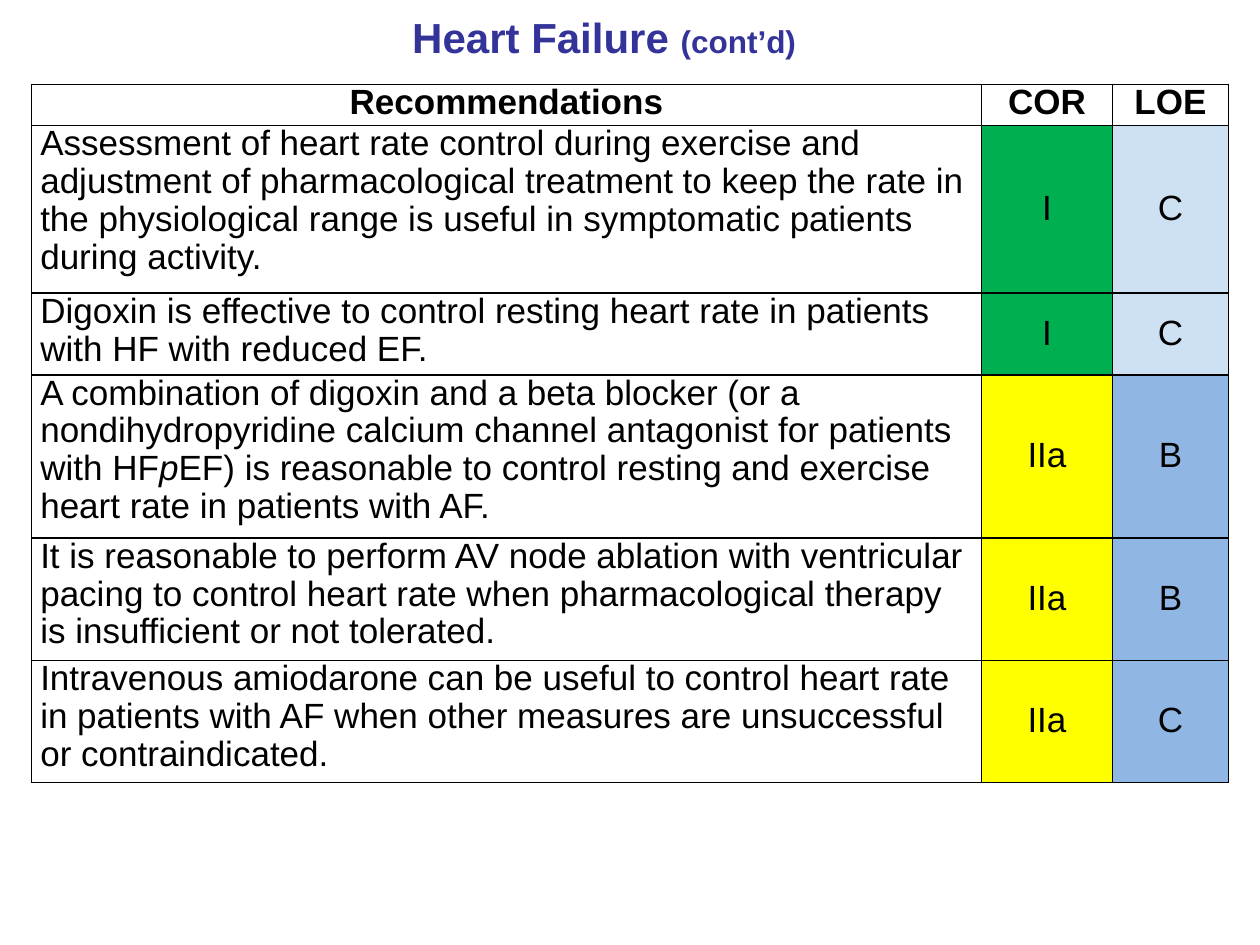
from dataclasses import dataclass

from lxml import etree
from pptx import Presentation, util as u
from pptx.dml.color import RGBColor
from pptx.enum import text
from pptx.oxml.ns import qn


@dataclass(frozen=True)
class Theme:
    font: str = "Arial"
    ink: str = "000000"
    paper: str = "FFFFFF"
    heading: str = "333399"
    title_size: int = 24
    suffix_size: int = 18
    body_size: int = 20
    line_spacing: float = 0.97
    border: float = 1


@dataclass(frozen=True)
class Span:
    words: str
    italic: bool = False


@dataclass(frozen=True)
class Recommendation:
    spans: tuple[Span, ...]
    cor: str
    loe: str
    loe_fill: str
    lines: float


THEME = Theme()
WIDTH, HEIGHT = u.Inches(10), u.Inches(7.5)
LINE_HEIGHT = u.Inches(0.31)
COLUMN_SHARES = (0.754, 0.104, 0.092)
COR_FILLS = {"I": "00B050", "IIa": "FFFF00"}
PALE, BLUE = "CEE1F2", "90B6E4"
HEADERS = ("Recommendations", "COR", "LOE")
RECOMMENDATIONS = (
    Recommendation((Span(
        "Assessment of heart rate control during exercise and adjustment of "
        "pharmacological treatment to keep the rate in the physiological range "
        "is useful in symptomatic patients during activity."),),
        "I", "C", PALE, 4.3),
    Recommendation((Span(
        "Digoxin is effective to control resting heart rate in patients with HF "
        "with reduced EF."),), "I", "C", PALE, 2),
    Recommendation((
        Span("A combination of digoxin and a beta blocker (or a "
             "nondihydropyridine calcium channel antagonist for patients with HF"),
        Span("p", italic=True),
        Span("EF) is reasonable to control resting and exercise heart rate in "
             "patients with AF.")), "IIa", "B", BLUE, 4),
    Recommendation((Span(
        "It is reasonable to perform AV node ablation with ventricular pacing to "
        "control heart rate when pharmacological therapy is insufficient or not "
        "tolerated."),), "IIa", "B", BLUE, 3),
    Recommendation((Span(
        "Intravenous amiodarone can be useful to control heart rate in patients "
        "with AF when other measures are unsuccessful or contraindicated."),),
        "IIa", "C", BLUE, 3),
)


def apply(target, formats: dict) -> None:
    for name, value in formats.items():
        setattr(target, name, value)


def add_span(para, words: str, size: float, color: str,
             bold: bool = False, italic: bool = False) -> None:
    span = para.add_run()
    span.text = words
    apply(span.font, {"name": THEME.font, "size": u.Pt(size),
                      "bold": bold, "italic": italic})
    span.font.color.rgb = RGBColor.from_string(color)


def add_borders(cell) -> None:
    properties = cell._tc.get_or_add_tcPr()
    for side in ("a:lnL", "a:lnR", "a:lnT", "a:lnB"):
        line = etree.SubElement(properties, qn(side), w=str(u.Pt(THEME.border)))
        fill = etree.SubElement(line, qn("a:solidFill"))
        etree.SubElement(fill, qn("a:srgbClr"), val=THEME.ink)


def fill_cell(cell, spans: tuple[Span, ...], fill: str = THEME.paper,
              bold: bool = False, centred: bool = True,
              middle: bool = False) -> None:
    apply(cell, {
        "margin_left": u.Inches(0.07), "margin_right": u.Inches(0.07),
        "margin_top": 0, "margin_bottom": 0,
        "vertical_anchor": text.MSO_ANCHOR.MIDDLE if middle
        else text.MSO_ANCHOR.TOP})
    add_borders(cell)
    cell.fill.solid()
    cell.fill.fore_color.rgb = RGBColor.from_string(fill)
    para = cell.text_frame.paragraphs[0]
    apply(para, {"line_spacing": THEME.line_spacing,
                 "alignment": text.PP_ALIGN.CENTER if centred
                 else text.PP_ALIGN.LEFT})
    for span in spans:
        add_span(para, span.words, THEME.body_size, THEME.ink, bold, span.italic)


def add_title(page) -> None:
    box = page.shapes.add_textbox(int(WIDTH * 0.033), 0,
                                  int(WIDTH * 0.9), u.Inches(0.58))
    apply(box.text_frame, {"word_wrap": True,
                           "vertical_anchor": text.MSO_ANCHOR.MIDDLE})
    para = box.text_frame.paragraphs[0]
    para.alignment = text.PP_ALIGN.CENTER
    add_span(para, "Heart Failure ", THEME.title_size, THEME.heading, bold=True)
    add_span(para, "(cont’d) ", THEME.suffix_size, THEME.heading, bold=True)


def add_recommendations(page) -> None:
    line_counts = [1] + [item.lines for item in RECOMMENDATIONS]
    table = page.shapes.add_table(
        len(line_counts), len(HEADERS), int(WIDTH * 0.025), u.Inches(0.67),
        int(WIDTH * sum(COLUMN_SHARES)),
        int(LINE_HEIGHT * sum(line_counts))).table
    apply(table, {"first_row": False, "horz_banding": False})
    for column, share in zip(table.columns, COLUMN_SHARES):
        column.width = int(WIDTH * share)
    for row, lines in zip(table.rows, line_counts):
        row.height = int(LINE_HEIGHT * lines)
    for index, header in enumerate(HEADERS):
        fill_cell(table.cell(0, index), (Span(header),), bold=True)
    for index, item in enumerate(RECOMMENDATIONS, start=1):
        fill_cell(table.cell(index, 0), item.spans, centred=False)
        fill_cell(table.cell(index, 1), (Span(item.cor),),
                  COR_FILLS[item.cor], middle=True)
        fill_cell(table.cell(index, 2), (Span(item.loe),),
                  item.loe_fill, middle=True)


def main() -> None:
    deck = Presentation()
    apply(deck, {"slide_width": WIDTH, "slide_height": HEIGHT})
    page = deck.slides.add_slide(deck.slide_layouts[6])
    add_title(page)
    add_recommendations(page)
    deck.save("out.pptx")


if __name__ == "__main__":
    main()
